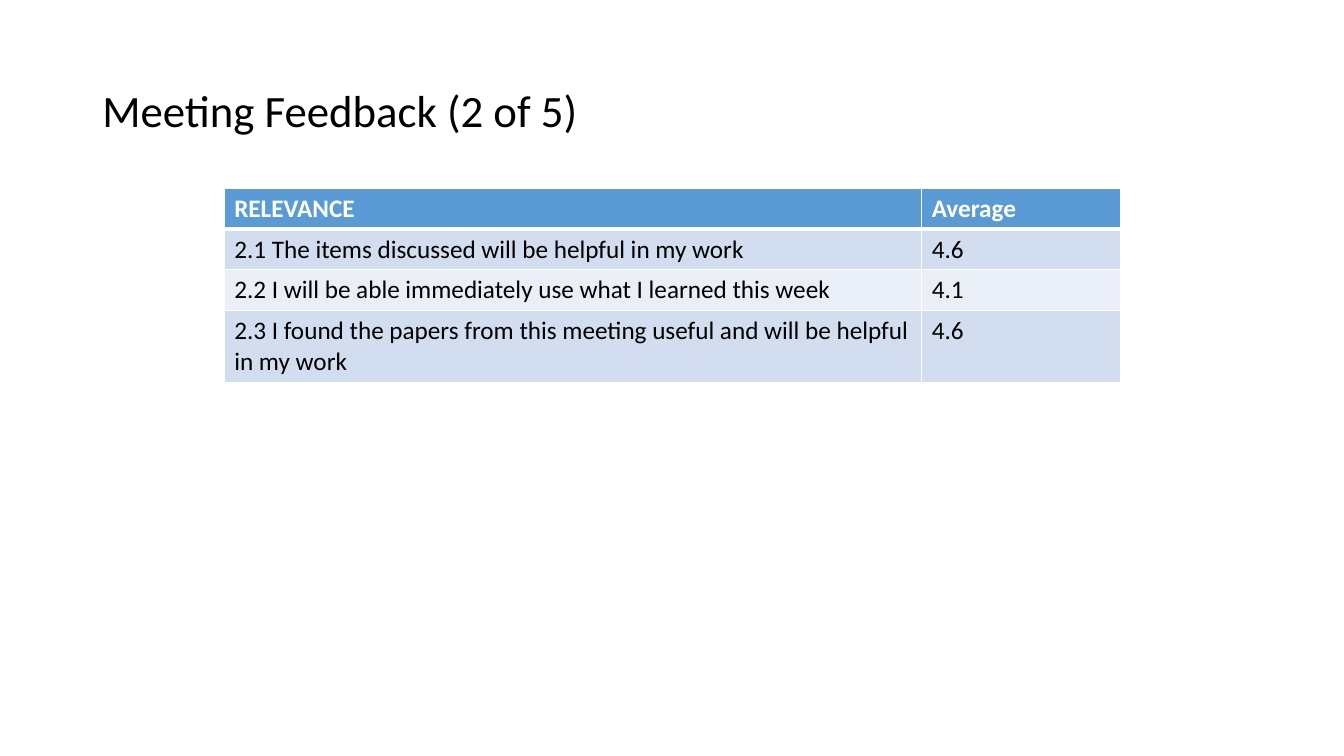
from dataclasses import dataclass

from lxml import etree
from pptx import Presentation
from pptx.dml.color import RGBColor
from pptx.enum.text import MSO_ANCHOR
from pptx.oxml.ns import qn
from pptx.slide import Slide
from pptx.table import _Cell
from pptx.text.text import TextFrame
from pptx.util import Cm, Pt

MIDDLE = MSO_ANCHOR.MIDDLE
FONT = "Calibri"
BLACK = "000000"
WHITE = "FFFFFF"
HEADER_BLUE = "5B9BD5"
BANDS = ("D2DEEF", "EAEFF7")
COLUMN_WIDTHS = (17.58, 5.0)
ROW_HEIGHT = 1.03
WRAPPED_ROW_HEIGHT = 1.8
THIN, THICK = 1, 3


@dataclass(frozen=True)
class Rating:
    statement: str
    average: str
    height: float = ROW_HEIGHT


HEADING = Rating("RELEVANCE", "Average")
RATINGS = (
    Rating("2.1 The items discussed will be helpful in my work", "4.6"),
    Rating("2.2 I will be able immediately use what I learned this week", "4.1"),
    Rating(
        "2.3 I found the papers from this meeting useful and will be helpful in my work",
        "4.6",
        WRAPPED_ROW_HEIGHT,
    ),
)


def rgb(value: str) -> RGBColor:
    return RGBColor.from_string(value)


def write(
    frame: TextFrame,
    text: str,
    *,
    size: float = 18,
    color: str = BLACK,
    bold: bool = False,
    line_spacing: float = 1.0,
) -> None:
    paragraph = frame.paragraphs[0]
    paragraph.line_spacing = line_spacing
    run = paragraph.add_run()
    run.text = text
    run.font.name = FONT
    run.font.size = Pt(size)
    run.font.bold = bold
    run.font.color.rgb = rgb(color)


def set_borders(cell: _Cell, top: float, bottom: float) -> None:
    properties = cell._tc.get_or_add_tcPr()
    widths = {"lnL": THIN, "lnR": THIN, "lnT": top, "lnB": bottom}
    for side, width in widths.items():
        line = etree.SubElement(properties, qn(f"a:{side}"), w=str(Pt(width)))
        fill = etree.SubElement(line, qn("a:solidFill"))
        etree.SubElement(fill, qn("a:srgbClr"), val=WHITE)


def add_title(slide: Slide, text: str) -> None:
    title = slide.shapes.add_textbox(Cm(2.33), Cm(1.01), Cm(29.21), Cm(3.68))
    frame = title.text_frame
    frame.word_wrap = True
    frame.vertical_anchor = MIDDLE
    write(frame, text, size=32, line_spacing=0.9)


def add_ratings(slide: Slide) -> None:
    rows = (HEADING, *RATINGS)
    table = slide.shapes.add_table(
        len(rows),
        len(COLUMN_WIDTHS),
        Cm(5.65),
        Cm(4.74),
        Cm(sum(COLUMN_WIDTHS)),
        Cm(sum(row.height for row in rows)),
    ).table
    for column, width in zip(table.columns, COLUMN_WIDTHS):
        column.width = Cm(width)
    for index, rating in enumerate(rows):
        is_header = index == 0
        background = HEADER_BLUE if is_header else BANDS[(index - 1) % len(BANDS)]
        table.rows[index].height = Cm(rating.height)
        for position, text in enumerate((rating.statement, rating.average)):
            cell = table.cell(index, position)
            set_borders(
                cell,
                top=THICK if index == 1 else THIN,
                bottom=THICK if is_header else THIN,
            )
            cell.fill.solid()
            cell.fill.fore_color.rgb = rgb(background)
            write(
                cell.text_frame,
                text,
                color=WHITE if is_header else BLACK,
                bold=is_header,
            )


def main() -> None:
    deck = Presentation()
    deck.slide_width = Cm(33.87)
    deck.slide_height = Cm(19.05)
    slide = deck.slides.add_slide(deck.slide_layouts[6])
    add_title(slide, "Meeting Feedback (2 of 5)")
    add_ratings(slide)
    deck.save("out.pptx")


if __name__ == "__main__":
    main()
